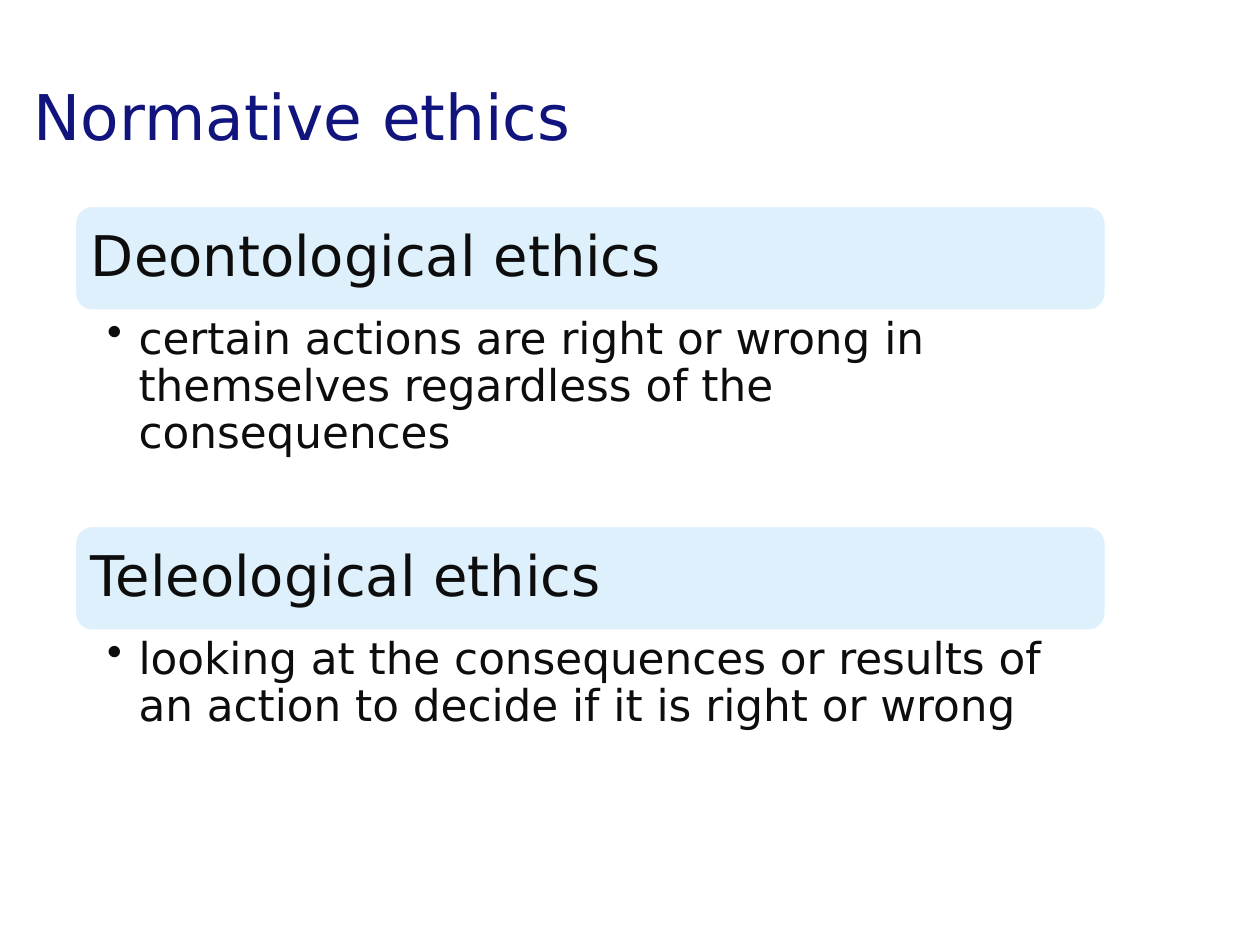
"""Build the slide on the two branches of normative ethics."""
from dataclasses import dataclass

import pptx
import pptx.dml.color
import pptx.enum.shapes
import pptx.enum.text
import pptx.oxml.ns
import pptx.util
from lxml import etree

Inches = pptx.util.Inches
Pt = pptx.util.Pt
Color = pptx.dml.color.RGBColor
Anchor = pptx.enum.text.MSO_ANCHOR

NAVY = Color(0x11, 0x14, 0x7D)
INK = Color(0x0D, 0x0D, 0x0D)
PALE = Color(0xDE, 0xF0, 0xFC)
WHITE = Color(0xFF, 0xFF, 0xFF)
FONT = "DejaVu Sans"
LEFT, WIDTH, HEAD = 0.59, 8.19, 0.84


@dataclass
class Branch:
    name: str
    point: str
    top: float
    depth: float


BRANCHES = [
    Branch("Deontological ethics",
           "certain actions are right or wrong in themselves regardless of the consequences",
           1.63, 1.7),
    Branch("Teleological ethics",
           "looking at the consequences or results of an action to decide if it is right or wrong",
           4.17, 0.85),
]


def write(shape, text: str, size: int, color, anchor, side: float, edge: float):
    frame = shape.text_frame
    frame.word_wrap = True
    frame.vertical_anchor = anchor
    frame.margin_left = frame.margin_right = Inches(side)
    frame.margin_top = frame.margin_bottom = Inches(edge)
    para = frame.paragraphs[0]
    para.text = text
    para.alignment = pptx.enum.text.PP_ALIGN.LEFT
    para.font.name = FONT
    para.font.size = Pt(size)
    para.font.color.rgb = color
    return para


def bullet(para) -> None:
    props = para._p.get_or_add_pPr()
    props.set("marL", str(Inches(0.25)))
    props.set("indent", str(Inches(-0.25)))
    mark = etree.Element(pptx.oxml.ns.qn("a:buChar"), char="•")
    props.insert_element_before(mark, "a:tabLst", "a:defRPr", "a:extLst")


def draw(slide, branch: Branch) -> None:
    bar = slide.shapes.add_shape(
        pptx.enum.shapes.MSO_SHAPE.ROUNDED_RECTANGLE,
        Inches(LEFT), Inches(branch.top), Inches(WIDTH), Inches(HEAD))
    bar.shadow.inherit = False
    bar.fill.solid()
    bar.fill.fore_color.rgb = PALE
    bar.line.color.rgb = WHITE
    bar.line.width = Pt(2)
    write(bar, branch.name, 32, INK, Anchor.MIDDLE, 0.09, 0.09).line_spacing = 0.9

    box = slide.shapes.add_textbox(
        Inches(LEFT), Inches(branch.top + HEAD), Inches(WIDTH), Inches(branch.depth))
    para = write(box, branch.point, 25, INK, Anchor.TOP, 0.26, 0.04)
    para.line_spacing = 0.9
    bullet(para)


def main() -> None:
    deck = pptx.Presentation()
    deck.slide_width, deck.slide_height = Inches(10), Inches(7.5)
    slide = deck.slides.add_slide(deck.slide_layouts[6])
    title = slide.shapes.add_textbox(Inches(0.17), Inches(0.33), Inches(9.42), Inches(1.17))
    write(title, "Normative ethics", 36, NAVY, Anchor.MIDDLE, 0.1, 0.05)
    for branch in BRANCHES:
        draw(slide, branch)
    deck.save("out.pptx")


if __name__ == "__main__":
    main()
